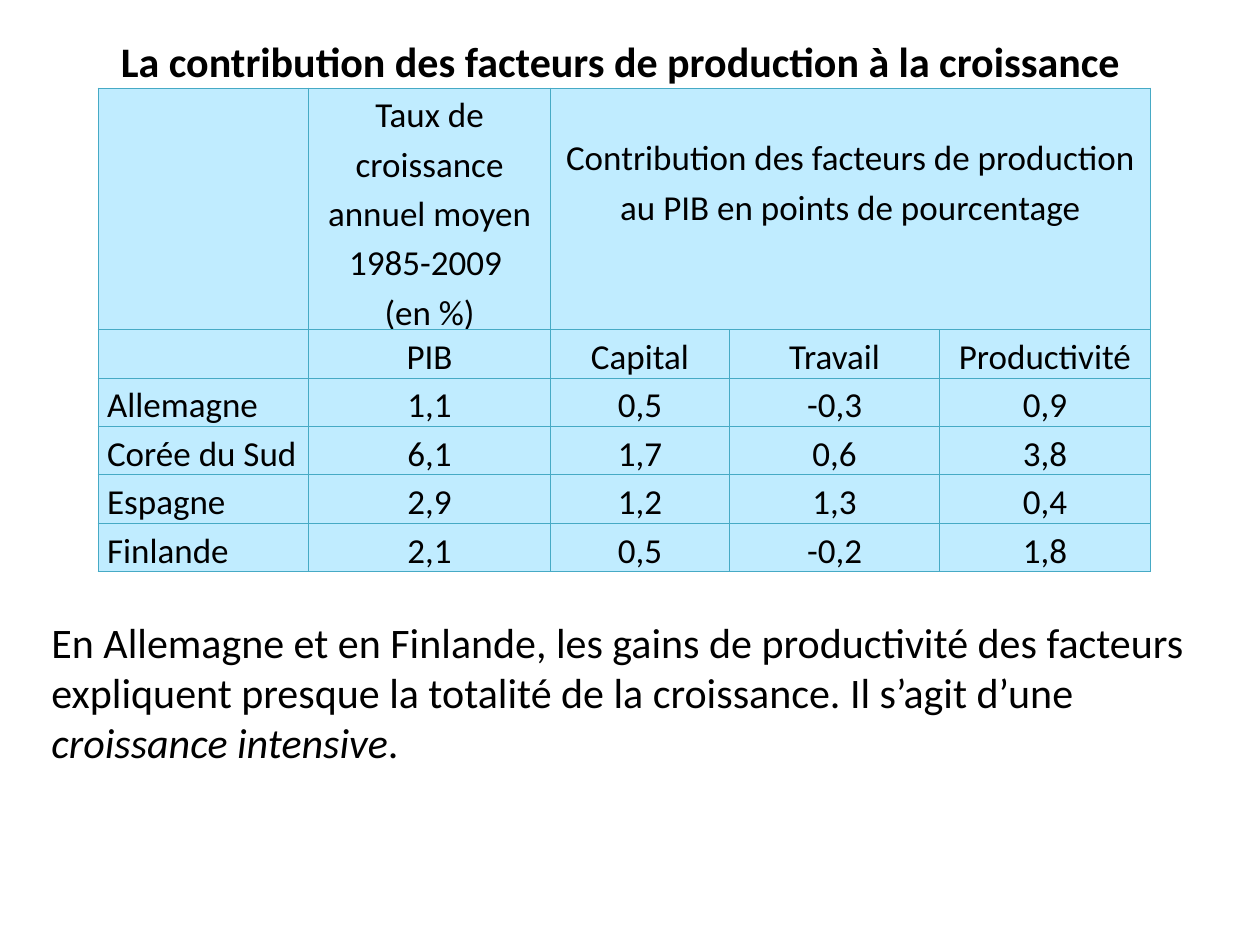
from dataclasses import dataclass

from lxml.etree import SubElement
from pptx import Presentation
from pptx.dml.color import RGBColor
from pptx.enum.text import MSO_ANCHOR as Anchor, MSO_AUTO_SIZE as AutoSize, PP_ALIGN as Align
from pptx.oxml.ns import qn
from pptx.util import Inches, Pt

FONT = "Calibri"
BLACK, CELL_FILL, BORDER = "000000", "C0ECFF", "46AAC5"
COLUMNS = (1.67, 1.92, 1.42, 1.67, 1.67)
ROWS = (1.32,) + (0.33,) * 5


@dataclass
class Box:
    left: float
    top: float
    width: float
    height: float

    def emu(self):
        return [Inches(v) for v in (self.left, self.top, self.width, self.height)]


@dataclass
class DataRow:
    label: str
    values: tuple[str, ...]


HEADER = DataRow("", (
    "Taux de croissance annuel moyen 1985-2009 \n(en %)",
    "Contribution des facteurs de production\nau PIB en points de pourcentage",
))
TABLE_ROWS = [
    HEADER,
    DataRow("", ("PIB", "Capital", "Travail", "Productivité")),
    DataRow("Allemagne", ("1,1", "0,5", "-0,3", "0,9")),
    DataRow("Corée du Sud", ("6,1", "1,7", "0,6", "3,8")),
    DataRow("Espagne", ("2,9", "1,2", "1,3", "0,4")),
    DataRow("Finlande", ("2,1", "0,5", "-0,2", "1,8")),
]


def rgb(value: str) -> RGBColor:
    return RGBColor.from_string(value)


def style(p, size: float, align: Align, bold: bool = False) -> None:
    p.alignment = align
    p.font.name, p.font.size, p.font.bold = FONT, Pt(size), bold
    p.font.color.rgb = rgb(BLACK)


def add_borders(cell) -> None:
    tc_pr = cell._tc.get_or_add_tcPr()
    for side in ("lnL", "lnR", "lnT", "lnB"):
        ln = SubElement(tc_pr, qn(f"a:{side}"), w=str(Pt(0.75)))
        fill = SubElement(ln, qn("a:solidFill"))
        SubElement(fill, qn("a:srgbClr"), val=BORDER)


def format_cell(cell, text: str, align: Align) -> None:
    add_borders(cell)
    cell.fill.solid()
    cell.fill.fore_color.rgb = rgb(CELL_FILL)
    cell.margin_left = cell.margin_right = Inches(0.07)
    cell.margin_top = cell.margin_bottom = 0
    cell.text = text
    for p in cell.text_frame.paragraphs:
        style(p, 20, align)
        p.line_spacing = 1.15


def add_factor_table(slide, box: Box) -> None:
    table = slide.shapes.add_table(len(ROWS), len(COLUMNS), *box.emu()).table
    table.first_row = table.horz_banding = False
    for column, width in zip(table.columns, COLUMNS):
        column.width = Inches(width)
    for row, height in zip(table.rows, ROWS):
        row.height = Inches(height)
    for row, data in zip(table.rows, TABLE_ROWS):
        texts = (data.label, *data.values)
        for i, cell in enumerate(row.cells):
            text = texts[i] if i < len(texts) else ""
            format_cell(cell, text, Align.CENTER if i else Align.JUSTIFY)
    contribution = table.cell(0, 2)
    contribution.margin_top = Inches(0.34)
    contribution.merge(table.cell(0, 4))


def format_title(title, box: Box) -> None:
    title.left, title.top, title.width, title.height = box.emu()
    tf = title.text_frame
    tf.text = "La contribution des facteurs de production à la croissance"
    tf.word_wrap, tf.auto_size = True, AutoSize.SHAPE_TO_FIT_TEXT
    tf.vertical_anchor = Anchor.TOP
    style(tf.paragraphs[0], 24, Align.LEFT, bold=True)


def add_comment(slide, box: Box) -> None:
    tf = slide.shapes.add_textbox(*box.emu()).text_frame
    tf.word_wrap, tf.auto_size = True, AutoSize.SHAPE_TO_FIT_TEXT
    p = tf.paragraphs[0]
    style(p, 24, Align.LEFT)
    p.add_run().text = (
        "En Allemagne et en Finlande, les gains de productivité des facteurs "
        "expliquent presque la totalité de la croissance. Il s’agit d’une "
    )
    r = p.add_run()
    r.text = "croissance intensive"
    r.font.italic = True
    p.add_run().text = "."


def main() -> None:
    prs = Presentation()
    prs.slide_width, prs.slide_height = Inches(10), Inches(7.5)
    slide = prs.slides.add_slide(prs.slide_layouts[5])
    format_title(slide.shapes.title, Box(0.86, 0.23, 8.36, 0.5))
    add_factor_table(slide, Box(0.78, 0.7, sum(COLUMNS), sum(ROWS)))
    add_comment(slide, Box(0.31, 4.84, 9.45, 1.31))
    prs.save("out.pptx")


if __name__ == "__main__":
    main()
